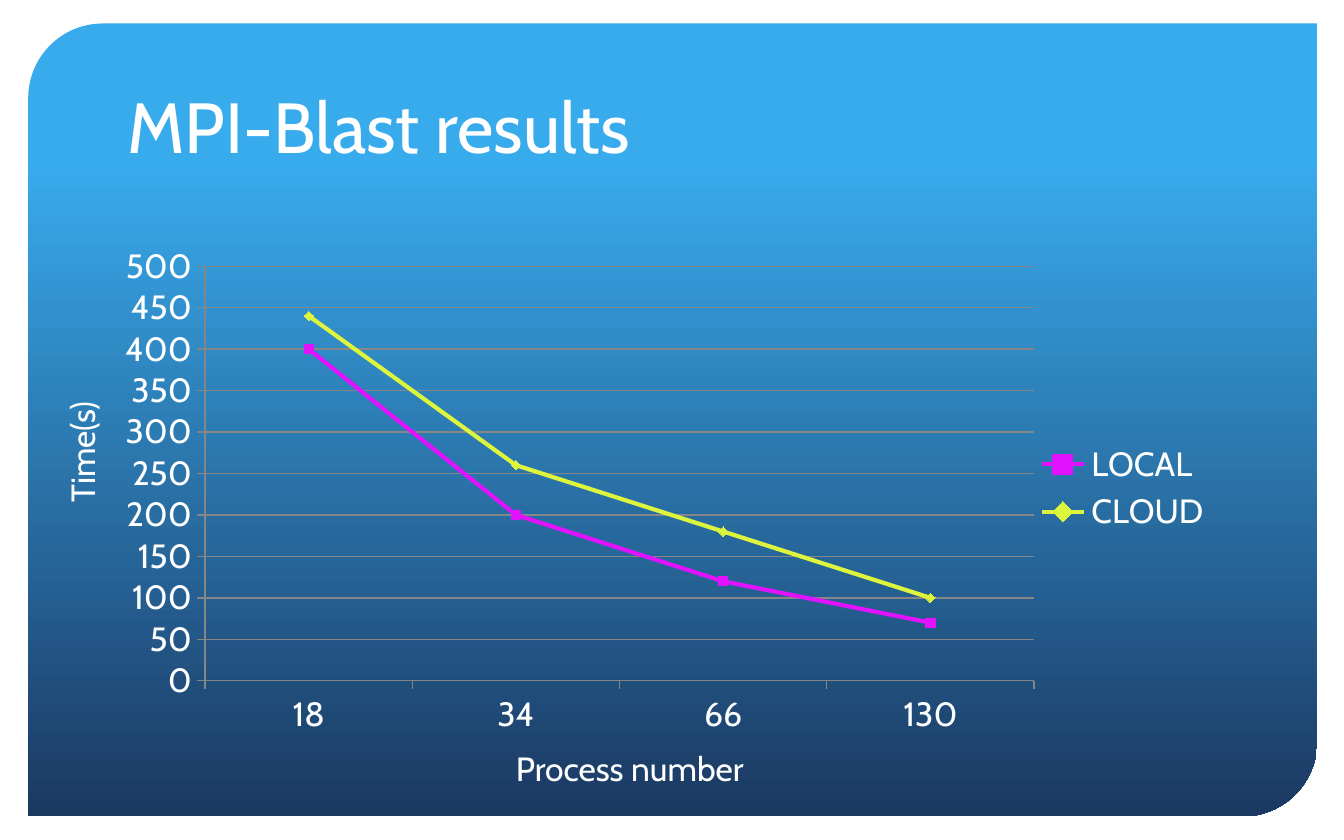
from dataclasses import dataclass

from lxml.etree import SubElement
from pptx import Presentation
from pptx.chart.data import CategoryChartData
from pptx.dml.color import RGBColor
from pptx.enum.chart import XL_CHART_TYPE as ChartType, XL_LEGEND_POSITION as LegendPosition
from pptx.enum.chart import XL_MARKER_STYLE as Marker, XL_TICK_MARK as TickMark
from pptx.enum.shapes import MSO_SHAPE as Preset
from pptx.enum.text import MSO_ANCHOR as Anchor, MSO_AUTO_SIZE as AutoSize, PP_ALIGN as Align
from pptx.oxml.ns import qn
from pptx.slide import Slide
from pptx.util import Inches, Pt

WIDTH, HEIGHT = 10, 6.25


def color(value):
    return RGBColor.from_string(value)


def box(left, top, width, height):
    return [Inches(share * side) for share, side in
            zip((left, top, width, height), (WIDTH, HEIGHT) * 2)]


@dataclass
class ResultSlide:
    """Slide style with one method per kind of element, placed by shares of the slide."""
    slide: Slide
    font_name: str = "Cabin"
    ink: str = "FFFFFF"
    grid: str = "868686"
    title_size: int = 38
    body_size: int = 18

    def set_font(self, font, size):
        font.name, font.size = self.font_name, Pt(size)
        font.color.rgb = color(self.ink)

    def title(self, text, place):
        shape = self.slide.shapes.title
        shape.left, shape.top, shape.width, shape.height = box(*place)
        frame = shape.text_frame
        frame.text = text
        frame.auto_size, frame.vertical_anchor = AutoSize.NONE, Anchor.BOTTOM
        paragraph = frame.paragraphs[0]
        paragraph.alignment = Align.LEFT
        self.set_font(paragraph.font, self.title_size)

    def panel(self, place, rounding, stops):
        shape = self.slide.shapes.add_shape(Preset.ROUND_2_DIAG_RECTANGLE, *box(*place))
        shape.adjustments[0] = rounding
        shape.shadow.inherit = False
        shape.line.fill.background()
        shape.fill.gradient()
        shape.fill.gradient_angle = 270
        for stop, (position, shade) in zip(shape.fill.gradient_stops, stops):
            stop.position, stop.color.rgb = position, color(shade)
        self.slide.shapes.title.element.addprevious(shape.element)

    def label(self, text, place, vertical=False):
        frame = self.slide.shapes.add_textbox(*box(*place)).text_frame
        frame.text = text
        frame.word_wrap, frame.auto_size = False, AutoSize.SHAPE_TO_FIT_TEXT
        if vertical:
            frame._bodyPr.set("vert", "vert270")
        self.set_font(frame.paragraphs[0].font, self.body_size)

    def line_chart(self, place, plot, categories, series):
        data = CategoryChartData()
        data.categories = categories
        for name, values, *_ in series:
            data.add_series(name, values)
        chart = self.slide.shapes.add_chart(ChartType.LINE_MARKERS, *box(*place), data).chart
        chart.has_title = False
        self.set_font(chart.font, self.body_size)
        chart.has_legend = True
        chart.legend.position = LegendPosition.RIGHT
        chart.legend.include_in_layout = False
        self.set_font(chart.legend.font, self.body_size)
        chart.value_axis.minimum_scale = 0
        chart.value_axis.maximum_scale = 500
        chart.value_axis.major_unit = 50
        chart.value_axis.has_major_gridlines = True
        chart.category_axis.has_major_gridlines = False
        for axis in (chart.category_axis, chart.value_axis):
            axis.major_tick_mark = TickMark.OUTSIDE
            self.set_font(axis.tick_labels.font, self.body_size)
            self.thin_line(axis.format.line)
        self.thin_line(chart.value_axis.major_gridlines.format.line)
        chart.plots[0].vary_by_categories = False
        for line, (_, _, shade, marker) in zip(chart.plots[0].series, series):
            line.smooth = False
            line.format.line.width = Pt(2.25)
            line.format.line.color.rgb = color(shade)
            line.marker.style, line.marker.size = marker, 5
            line.marker.format.fill.solid()
            line.marker.format.fill.fore_color.rgb = color(shade)
            line.marker.format.line.color.rgb = color(shade)
        self.fix_plot(chart, plot)

    def thin_line(self, line):
        line.width = Pt(0.75)
        line.color.rgb = color(self.grid)

    def fix_plot(self, chart, plot):
        area = chart.element.find(".//" + qn("c:plotArea"))
        for old in area.findall(qn("c:layout")):
            area.remove(old)
        layout = SubElement(area, qn("c:layout"))
        area.insert(0, layout)
        manual = SubElement(layout, qn("c:manualLayout"))
        settings = [("layoutTarget", "inner"), ("xMode", "edge"), ("yMode", "edge"),
                    *zip("xywh", plot)]
        for tag, value in settings:
            SubElement(manual, qn(f"c:{tag}")).set("val", str(value))


def main():
    presentation = Presentation()
    presentation.slide_width, presentation.slide_height = Inches(WIDTH), Inches(HEIGHT)
    layout = presentation.slide_layouts.get_by_name("Title Only")
    result = ResultSlide(presentation.slides.add_slide(layout))
    result.panel((0.021, 0.028, 0.959, 0.944), 0.094, [(0.17, "38ABED"), (1, "1B3861")])
    result.title("MPI-Blast results", (0.085, 0.056, 0.829, 0.152))
    result.line_chart(
        (0.083, 0.274, 0.829, 0.614), (0.084, 0.07, 0.744, 0.804),
        ["18", "34", "66", "130"],
        [("LOCAL", (400, 200, 120, 70), "E113FF", Marker.SQUARE),
         ("CLOUD", (440, 260, 180, 100), "DDF53D", Marker.DIAMOND)])
    result.label("Time(s)", (0.041, 0.462, 0.05, 0.152), vertical=True)
    result.label("Process number", (0.374, 0.883, 0.197, 0.064))
    presentation.save("out.pptx")


if __name__ == "__main__":
    main()
